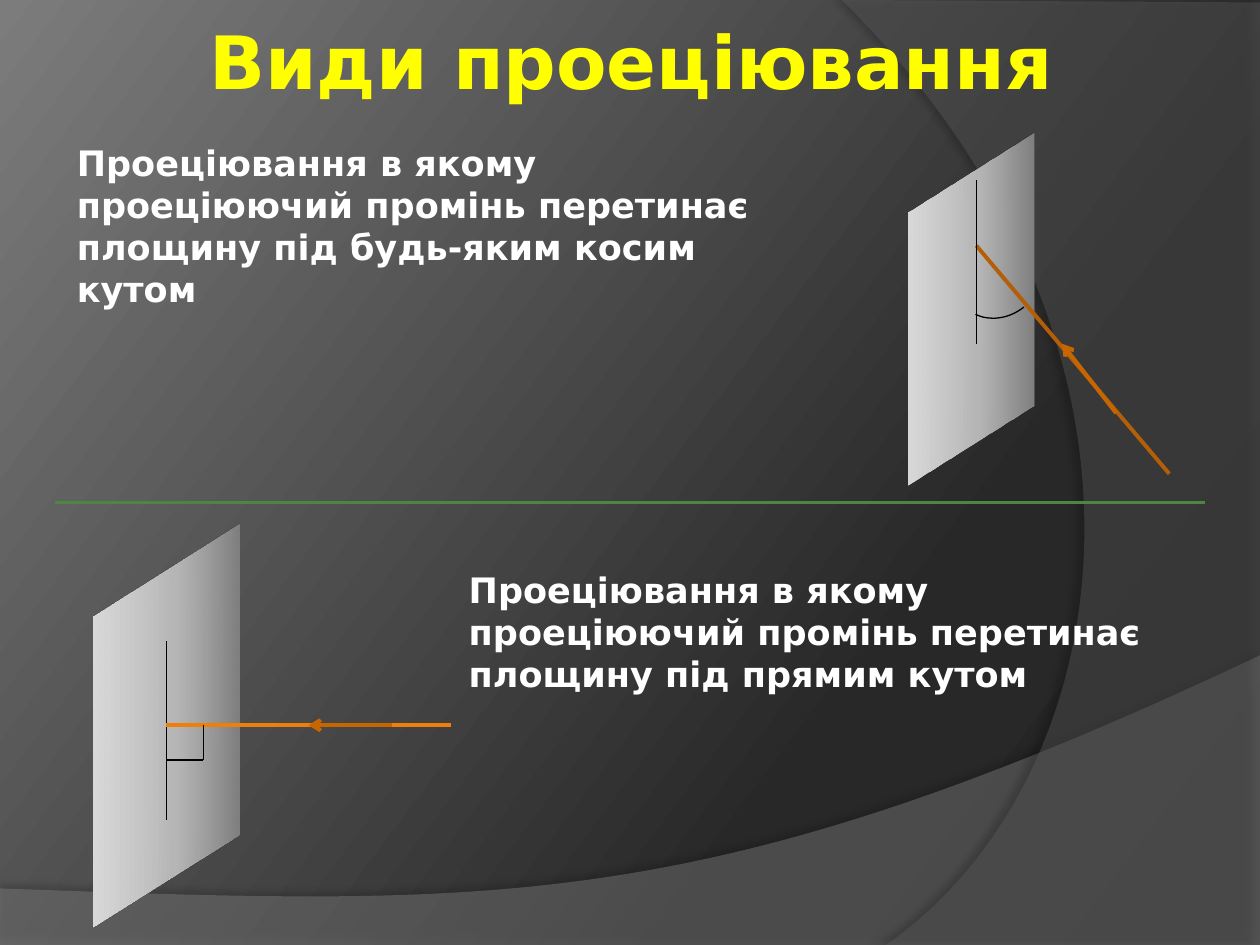
from lxml import etree
from pptx import Presentation
from pptx.dml.color import RGBColor
from pptx.enum.shapes import MSO_CONNECTOR, MSO_SHAPE
from pptx.enum.text import MSO_ANCHOR, PP_ALIGN
from pptx.oxml.ns import qn
from pptx.util import Cm, Pt

STRAIGHT = MSO_CONNECTOR.STRAIGHT
ARC = MSO_SHAPE.ARC
RECT = MSO_SHAPE.RECTANGLE
TOP = MSO_ANCHOR.TOP
LEFT = PP_ALIGN.LEFT
FONT = "DejaVu Sans"
WIDE, HIGH = 25.4, 19.05

HEX = {
    "title": "FFFF00", "text": "FFFFFF", "black": "000000",
    "green": "4E8542", "brown": "B45F07", "orange": "F07F09", "arrow": "C76600",
    "edge": "B25E07", "band": "7F7F7F", "side": "5E5E5E",
}
BACK = [(0, "222222"), (30, "282828"), (100, "7C7C7C")]
PLANE = [(0, "808080"), (50, "B7B7B7"), (100, "D9D9D9")]


def blend(fill, root, stops, angle):
    """Give fill, found under root, a linear gradient; angle runs clockwise."""
    fill.gradient()
    grad = root.find(".//" + qn("a:gradFill"))
    for child in list(grad):
        grad.remove(child)
    group = etree.SubElement(grad, qn("a:gsLst"))
    for place, tone in stops:
        stop = etree.SubElement(group, qn("a:gs"), pos=str(place * 1000))
        etree.SubElement(stop, qn("a:srgbClr"), val=tone)
    etree.SubElement(grad, qn("a:lin"), ang=str(angle * 60000), scaled="0")


deck = Presentation()
deck.slide_width, deck.slide_height = Cm(WIDE), Cm(HIGH)
slide = deck.slides.add_slide(deck.slide_layouts[5])
blend(slide.background.fill, slide.element, BACK, 217)

# Curved backdrop: Bezier points, closing corners, colour, opacity, shadow
waves = [
    ([(25.4, 13.21), (14.2, 18.52), (9.93, 18.26), (0, 17.91)],
     [(0, HIGH), (WIDE, HIGH)], "band", 45, 35, 3.5, 270),
    ([(17.86, HIGH), (22.63, 15.72), (24.05, 6.99), (16.97, 0)],
     [(WIDE, 0.05), (WIDE, HIGH)], "side", 40, 45, 4, 180),
]
for curve, ends, tone, alpha, shade, dist, turn in waves:
    spots = [(Cm(x), Cm(y)) for x, y in curve + ends]
    form = slide.shapes.build_freeform(*spots[0])
    form.add_line_segments(spots[1:], close=True)
    wave = form.convert_to_shape()
    # Merge the first three segments into one cubic curve
    steps = wave.element.findall(".//" + qn("a:lnTo"))[:3]
    bend = etree.Element(qn("a:cubicBezTo"))
    steps[0].addprevious(bend)
    for step in steps:
        bend.append(step[0])
        step.getparent().remove(step)
    wave.shadow.inherit = False
    wave.line.fill.background()
    wave.fill.solid()
    wave.fill.fore_color.rgb = RGBColor.from_string(HEX[tone])
    clear = wave.element.spPr.find(qn("a:solidFill"))[0]
    etree.SubElement(clear, qn("a:alpha"), val=str(alpha * 1000))
    glow = etree.SubElement(
        wave.element.spPr.find(qn("a:effectLst")), qn("a:outerShdw"),
        blurRad=str(Pt(4)), dist=str(Pt(dist)), dir=str(turn * 60000))
    dark = etree.SubElement(glow, qn("a:srgbClr"), val=HEX["black"])
    etree.SubElement(dark, qn("a:alpha"), val=str(shade * 1000))

# Planes: squares turned in space
for area in [(16.69, 3.33, 5.79, 5.79), (0, 11.33, 6.71, 6.6)]:
    plane = slide.shapes.add_shape(RECT, *[Cm(n) for n in area])
    plane.shadow.inherit = False
    blend(plane.fill, plane.element, PLANE, 180)
    plane.line.color.rgb = RGBColor.from_string(HEX["edge"])
    plane.line.width = Pt(1.5)
    scene = etree.SubElement(plane.element.spPr, qn("a:scene3d"))
    etree.SubElement(scene, qn("a:camera"), prst="isometricOffAxis2Right")
    etree.SubElement(scene, qn("a:lightRig"), rig="threePt", dir="t")

# Lines: start, end, colour, width, arrowhead
lines = [
    (19.68, 4.95, 23.57, 9.55, "brown", 2.25, False),
    (19.68, 3.63, 19.68, 6.93, "black", 0.25, False),
    (1.1, 10.13, 24.3, 10.13, "green", 1.5, False),
    (3.35, 12.93, 3.35, 16.54, "black", 0.5, False),
    (3.35, 14.62, 9.09, 14.62, "orange", 2.25, False),
    (3.35, 15.32, 4.1, 15.32, "black", 0.75, False),
    (4.1, 15.32, 4.1, 14.62, "black", 0.75, False),
    (7.9, 14.62, 6.22, 14.62, "arrow", 2.25, True),
    (22.5, 8.33, 21.41, 6.93, "arrow", 2.25, True),
]
for *ends, tone, width, head in lines:
    line = slide.shapes.add_connector(STRAIGHT, *[Cm(n) for n in ends])
    line.line.color.rgb = RGBColor.from_string(HEX[tone])
    line.line.width = Pt(width)
    if head:
        etree.SubElement(line.element.spPr.find(qn("a:ln")),
                         qn("a:tailEnd"), type="arrow")
    etree.SubElement(line.element.spPr, qn("a:effectLst"))

arc = slide.shapes.add_shape(ARC, Cm(19.15), Cm(4.62), Cm(1.96), Cm(1.73))
arc.adjustments[0], arc.adjustments[1] = 169.53, 208.26
arc.rotation = 131.7
arc.shadow.inherit = False
arc.fill.background()
arc.line.color.rgb = RGBColor.from_string(HEX["black"])
arc.line.width = Pt(0.75)

title = slide.shapes.title
title.element.getparent().append(title.element)  # in front of the backdrop
title.left, title.top, title.width, title.height = (
    Cm(4.09), Cm(0.33), Cm(18.42), Cm(2.36))
frame = title.text_frame
frame.text = "Види проеціювання"
frame.vertical_anchor = TOP
frame.margin_left = frame.margin_right = Cm(0.13)
frame.margin_top = frame.margin_bottom = 0
para = frame.paragraphs[0]
para.alignment = LEFT
font = para.runs[0].font
font.name, font.size, font.bold = FONT, Pt(42), True
font.color.rgb = RGBColor.from_string(HEX["title"])

notes = [
    (1.3, 2.72, 14.2, 3.68, "Проеціювання в якому проеціюючий промінь "
     "перетинає площину під будь-яким косим кутом"),
    (9.2, 11.33, 15.09, 2.82, "Проеціювання в якому проеціюючий промінь "
     "перетинає площину під прямим кутом"),
]
for *area, words in notes:
    frame = slide.shapes.add_textbox(*[Cm(n) for n in area]).text_frame
    frame.word_wrap = True
    frame.text = words
    para = frame.paragraphs[0]
    para.line_spacing = Pt(24)
    font = para.runs[0].font
    font.name, font.size, font.bold = FONT, Pt(20), True
    font.color.rgb = RGBColor.from_string(HEX["text"])

deck.save("out.pptx")
